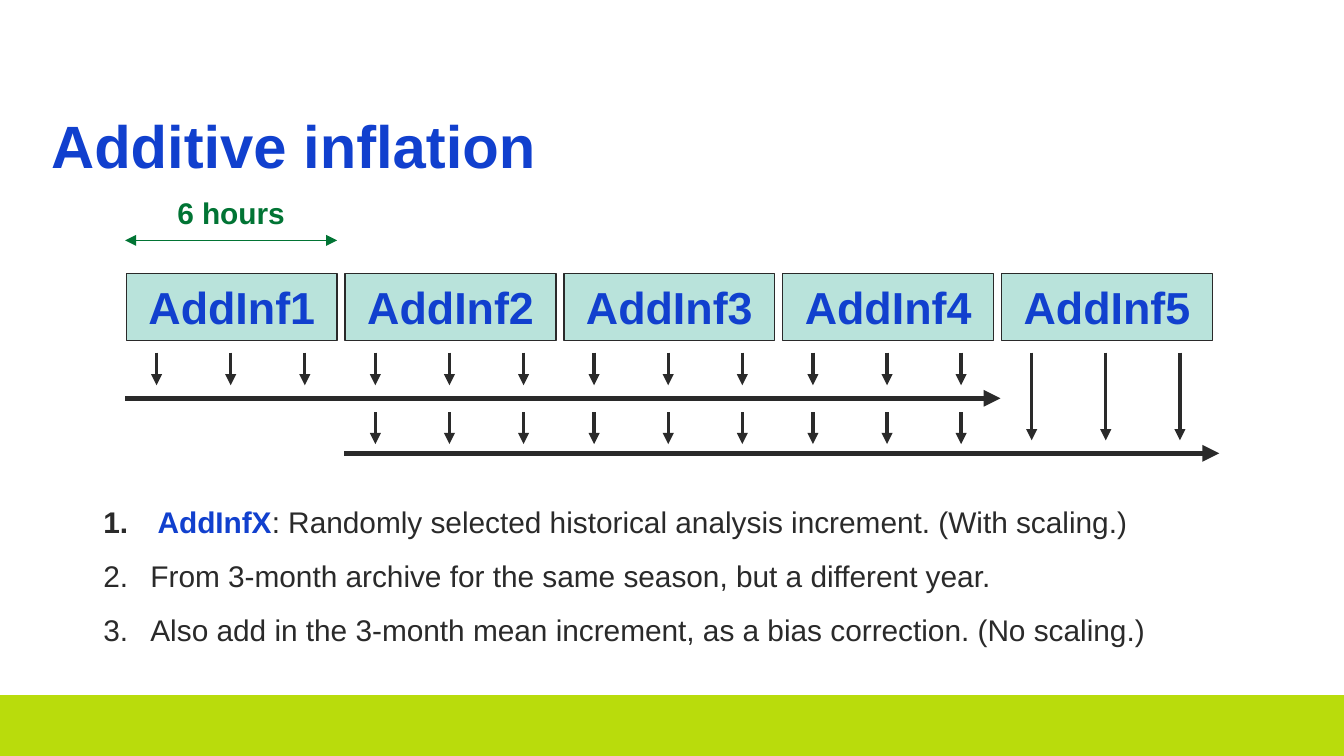
from lxml import etree
from pptx import Presentation
from pptx.dml.color import RGBColor
from pptx.enum import shapes, text
from pptx.oxml import ns
from pptx.util import Pt

INK, BLUE, GREEN = "2A2A2A", "1140CE", "017434"
LIME, MINT = "B9DC0C", "B9E3DB"


def rgb(value):
    return RGBColor.from_string(value)


def add_run(p, words, size=16, color=INK, bold=False):
    r = p.add_run()
    r.text = words
    r.font.name, r.font.size, r.font.bold = "Arial", Pt(size), bold
    r.font.color.rgb = rgb(color)


def place(sp, left, top, width, height):
    sp.left, sp.top, sp.width, sp.height = Pt(left), Pt(top), Pt(width), Pt(height)


def set_frame(tf, anchor, wrap=True):
    tf.word_wrap = wrap
    tf.auto_size = text.MSO_AUTO_SIZE.NONE
    tf.vertical_anchor = anchor
    tf.margin_left = tf.margin_right = Pt(7.2)
    tf.margin_top = tf.margin_bottom = Pt(3.6)


def add_rect(s, left, top, width, height, fill, line, weight):
    sp = s.shapes.add_shape(shapes.MSO_SHAPE.RECTANGLE,
                            Pt(left), Pt(top), Pt(width), Pt(height))
    sp.shadow.inherit = False
    sp.fill.solid()
    sp.fill.fore_color.rgb = rgb(fill)
    sp.line.color.rgb = rgb(line)
    sp.line.width = Pt(weight)
    return sp


def add_arrow(s, x1, y1, x2, y2, color=INK, weight=1.75, ends=("tailEnd",)):
    cxn = s.shapes.add_connector(shapes.MSO_CONNECTOR.STRAIGHT,
                                 Pt(x1), Pt(y1), Pt(x2), Pt(y2))
    cxn.line.color.rgb = rgb(color)
    cxn.line.width = Pt(weight)
    ln = cxn.line._get_or_add_ln()
    for end in ends:
        etree.SubElement(ln, ns.qn("a:" + end), type="triangle")
    etree.SubElement(cxn._element.spPr, ns.qn("a:effectLst"))


def add_title(s, words, left, top, width, height):
    sp = s.shapes.title
    place(sp, left, top, width, height)
    set_frame(sp.text_frame, text.MSO_ANCHOR.BOTTOM)
    p = sp.text_frame.paragraphs[0]
    p.alignment = text.PP_ALIGN.LEFT
    p.line_spacing = 0.9
    add_run(p, words, size=32, color=BLUE, bold=True)


def add_numbered_list(s, items, left, top, width, height):
    """Each item is a list of (words, run format) pairs."""
    sp = s.placeholders[1]
    place(sp, left, top, width, height)
    tf = sp.text_frame
    set_frame(tf, text.MSO_ANCHOR.TOP)
    for i, item in enumerate(items):
        p = tf.add_paragraph() if i else tf.paragraphs[0]
        pPr = p._p.get_or_add_pPr()
        pPr.set("marL", str(Pt(25.2)))
        pPr.set("indent", str(-Pt(25.2)))
        color = etree.SubElement(pPr, ns.qn("a:buClr"))
        etree.SubElement(color, ns.qn("a:srgbClr"), val=INK)
        etree.SubElement(pPr, ns.qn("a:buFont"), typeface="Arial")
        etree.SubElement(pPr, ns.qn("a:buAutoNum"), type="arabicPeriod")
        p.line_spacing = 0.8
        p.space_before = Pt(6.8 if i else 0)
        p.space_after = Pt(6.8)
        for words, look in item:
            add_run(p, words, **look)


def add_duration(s, words, left, top, width):
    """Label centred over a double-headed arrow."""
    sp = s.shapes.add_textbox(Pt(left), Pt(top), Pt(width), Pt(26.6))
    set_frame(sp.text_frame, text.MSO_ANCHOR.TOP, wrap=False)
    p = sp.text_frame.paragraphs[0]
    p.alignment = text.PP_ALIGN.CENTER
    add_run(p, words, color=GREEN, bold=True)
    y = top + 28
    add_arrow(s, left, y, left + width, y, GREEN, 0.75, ("headEnd", "tailEnd"))


def add_timeline(s, left, top, count=5, pitch=117.2, width=113, height=36):
    """Row of increments feeding two overlapping forecast windows."""
    window = 4
    first_y, second_y = top + 67, top + 96.5
    for i in range(count):
        x = left + i * pitch
        sp = add_rect(s, x, top, width, height, MINT, INK, 0.75)
        set_frame(sp.text_frame, text.MSO_ANCHOR.MIDDLE, wrap=False)
        p = sp.text_frame.paragraphs[0]
        p.alignment = text.PP_ALIGN.CENTER
        add_run(p, f"AddInf{i + 1}", size=24, color=BLUE, bold=True)
        for step in range(3):
            ax = x + 16.2 + step * 39.7
            end = first_y if i < window else second_y
            add_arrow(s, ax, top + 42.5, ax, end - 7)
            if 0 < i < window:
                add_arrow(s, ax, first_y + 7.5, ax, second_y - 5)
    for start, y in enumerate((first_y, second_y)):
        x = left - 0.5 + start * pitch
        add_arrow(s, x, y, x + window * pitch, y, weight=3)


def build_slide(prs):
    s = prs.slides.add_slide(prs.slide_layouts[1])
    add_rect(s, 0, 373, 720, 32, LIME, LIME, 1)
    add_title(s, "Additive inflation", 20.2, 55.4, 680, 45.4)
    add_duration(s, "6 hours", 67, 100.8, 113.6)
    add_timeline(s, 67.7, 146.4)
    add_numbered_list(s, [
        [(" AddInfX", dict(color=BLUE, bold=True)),
         (": Randomly selected historical analysis increment. (With scaling.)", {})],
        [("From 3-month archive for the same season, but a different year.", {})],
        [("Also add in the 3-month mean increment, as a bias correction. (No scaling.)", {})],
    ], 48.2, 270, 652.3, 82)


def main():
    prs = Presentation()
    prs.slide_width, prs.slide_height = Pt(720), Pt(405)
    build_slide(prs)
    prs.save("out.pptx")


if __name__ == "__main__":
    main()
